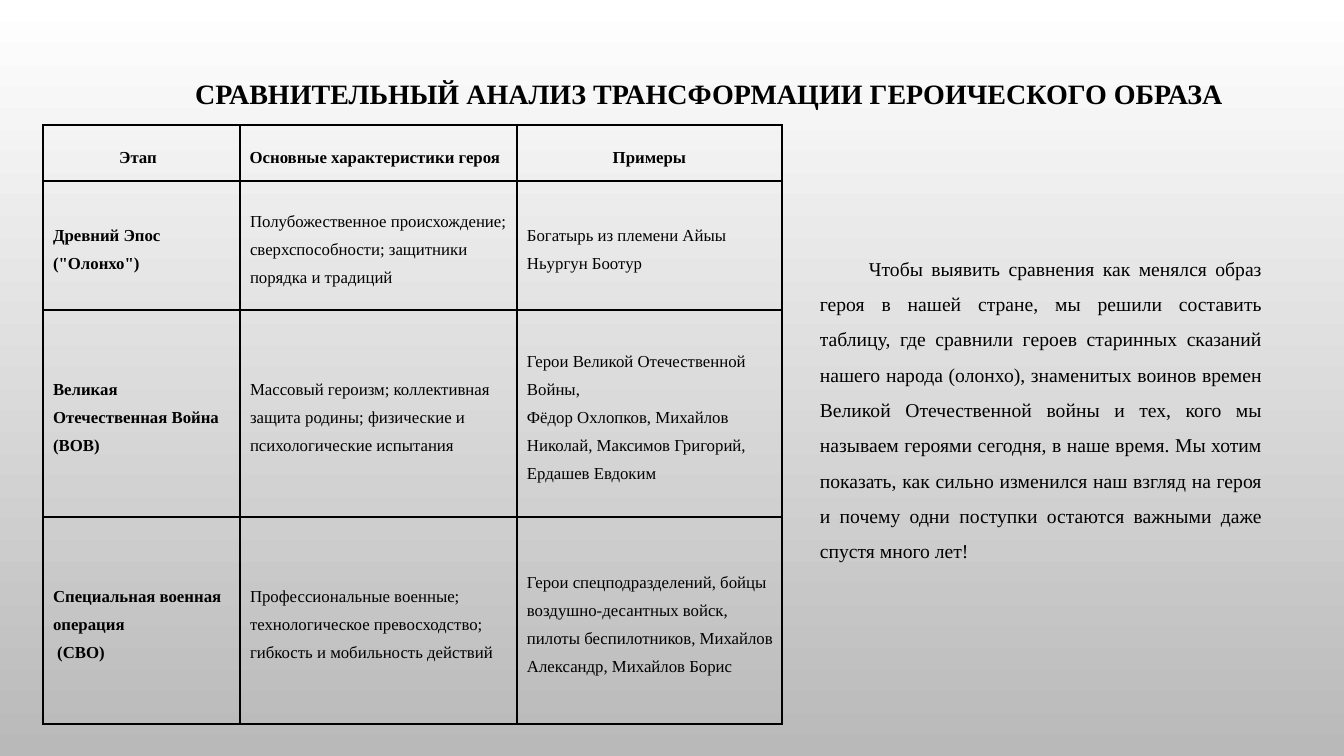
from copy import deepcopy

from lxml import etree
from pptx import Presentation
from pptx.dml.color import RGBColor
from pptx.enum.text import MSO_ANCHOR, MSO_AUTO_SIZE, PP_ALIGN
from pptx.oxml import parse_xml
from pptx.oxml.ns import nsdecls, qn
from pptx.util import Pt

CENTER, LEFT, JUSTIFY = PP_ALIGN.CENTER, PP_ALIGN.LEFT, PP_ALIGN.JUSTIFY
MIDDLE = MSO_ANCHOR.MIDDLE
NO_FIT, GROW = MSO_AUTO_SIZE.NONE, MSO_AUTO_SIZE.SHAPE_TO_FIT_TEXT
TITLE_ONLY = 5

COLORS = {"ink": "000000", "sky": "FFFFFF", "ground": "B9B9B9"}
FONT = "Times New Roman"
LINE_SPACING = 1.5

TITLE = "СРАВНИТЕЛЬНЫЙ АНАЛИЗ ТРАНСФОРМАЦИИ ГЕРОИЧЕСКОГО ОБРАЗА"
COLUMN_WIDTHS = [197, 277, 265]
ROW_HEIGHTS = [56, 129, 207, 207]

# Each cell is a list of paragraphs
HEROES = [
    [["Этап"], ["Основные характеристики героя"], ["Примеры"]],
    [["Древний Эпос (\"Олонхо\")"],
     ["Полубожественное происхождение; сверхспособности; защитники порядка и традиций"],
     ["Богатырь из племени Айыы Ньургун Боотур"]],
    [["Великая Отечественная Война (ВОВ)"],
     ["Массовый героизм; коллективная защита родины; физические и психологические испытания"],
     ["Герои Великой Отечественной Войны,",
      "Фёдор Охлопков, Михайлов Николай, Максимов Григорий, Ердашев Евдоким"]],
    [["Специальная военная операция", " (СВО)"],
     ["Профессиональные военные; технологическое превосходство; "
      "гибкость и мобильность действий"],
     ["Герои спецподразделений, бойцы воздушно-десантных войск, пилоты беспилотников, "
      "Михайлов Александр, Михайлов Борис"]],
]
COMMENTARY = (
    "Чтобы выявить сравнения как менялся образ героя в нашей стране, мы решили составить "
    "таблицу, где сравнили героев старинных сказаний нашего народа (олонхо), знаменитых "
    "воинов времен Великой Отечественной войны и тех, кого мы называем героями сегодня, "
    "в наше время. Мы хотим показать, как сильно изменился наш взгляд на героя и почему "
    "одни поступки остаются важными даже спустя много лет!"
)


def px(value):
    return round(value * 914400 / 100.8)


def rgb(name):
    return RGBColor.from_string(COLORS[name])


class SlideBuilder:
    def __init__(self, presentation):
        layout = presentation.slide_layouts[TITLE_ONLY]
        self.slide = presentation.slides.add_slide(layout)

    def background(self, top, bottom):
        fill = self.slide.background.fill
        fill.gradient()
        fill.gradient_angle = 270
        for stop, name in zip(fill.gradient_stops, (top, bottom)):
            stop.color.rgb = rgb(name)

    def add_text(self, paragraph, text, size, bold=False, align=LEFT, margin=0, indent=0):
        properties = paragraph._p.get_or_add_pPr()
        properties.set("marL", str(px(margin)))
        properties.set("indent", str(px(indent)))
        paragraph.alignment = align
        paragraph.line_spacing = LINE_SPACING
        run = paragraph.add_run()
        run.text = text
        font = run.font
        font.name, font.size, font.bold = FONT, Pt(size), bold
        font.color.rgb = rgb("ink")
        return run

    def title(self, text, left, top, width, height):
        shape = self.slide.shapes.title
        shape.left, shape.top = px(left), px(top)
        shape.width, shape.height = px(width), px(height)
        frame = shape.text_frame
        frame.auto_size, frame.vertical_anchor = NO_FIT, MIDDLE
        paragraph = frame.paragraphs[0]
        run = self.add_text(paragraph, text, 20, True, CENTER, margin=50)
        # The closing line break keeps the size of the title text
        paragraph.add_line_break()
        paragraph._p.find(qn("a:br")).append(deepcopy(run.font._rPr))
        ending = etree.SubElement(paragraph._p, qn("a:endParaRPr"))
        ending.set("sz", "2000")

    def text(self, text, left, top, width, height, size, indent):
        shape = self.slide.shapes.add_textbox(px(left), px(top), px(width), px(height))
        frame = shape.text_frame
        frame.word_wrap, frame.auto_size = True, GROW
        self.add_text(frame.paragraphs[0], text, size, align=JUSTIFY, indent=indent)

    def border(self, cell):
        properties = cell._tc.get_or_add_tcPr()
        for side in "LRTB":
            properties.append(parse_xml(
                f'<a:ln{side} {nsdecls("a")} w="{Pt(1)}"><a:solidFill>'
                f'<a:srgbClr val="{COLORS["ink"]}"/></a:solidFill></a:ln{side}>'))

    def table(self, rows, left, top, widths, heights, size):
        frame = self.slide.shapes.add_table(
            len(rows), len(widths), px(left), px(top), px(sum(widths)), px(sum(heights)))
        table = frame.table
        table.first_row = table.horz_banding = False
        for column, width in zip(table.columns, widths):
            column.width = px(width)
        for row, height in zip(table.rows, heights):
            row.height = px(height)
        for row_index, row in enumerate(rows):
            header = row_index == 0
            for column_index, texts in enumerate(row):
                cell = table.cell(row_index, column_index)
                cell.vertical_anchor = MIDDLE
                cell.margin_left = 0
                cell.margin_right = 0 if column_index == len(widths) - 1 else px(7)
                cell.margin_top = cell.margin_bottom = px(5)
                self.border(cell)
                cell.fill.background()
                cell_text = cell.text_frame
                for index, text in enumerate(texts):
                    paragraph = cell_text.add_paragraph() if index else cell_text.paragraphs[0]
                    self.add_text(paragraph, text, size, header or column_index == 0,
                                  CENTER if header else LEFT, 0 if header else 10)


def main():
    presentation = Presentation()
    presentation.slide_width, presentation.slide_height = px(1344), px(756)
    builder = SlideBuilder(presentation)
    builder.background("sky", "ground")

    # Heading
    builder.title(TITLE, 113, 14, 1142, 176)

    # Comparison of heroes
    builder.table(HEROES, 43, 125, COLUMN_WIDTHS, ROW_HEIGHTS, 12)

    # Commentary on the right
    builder.text(COMMENTARY, 810, 240, 462, 331, 14, 49)

    presentation.save("out.pptx")


if __name__ == "__main__":
    main()
